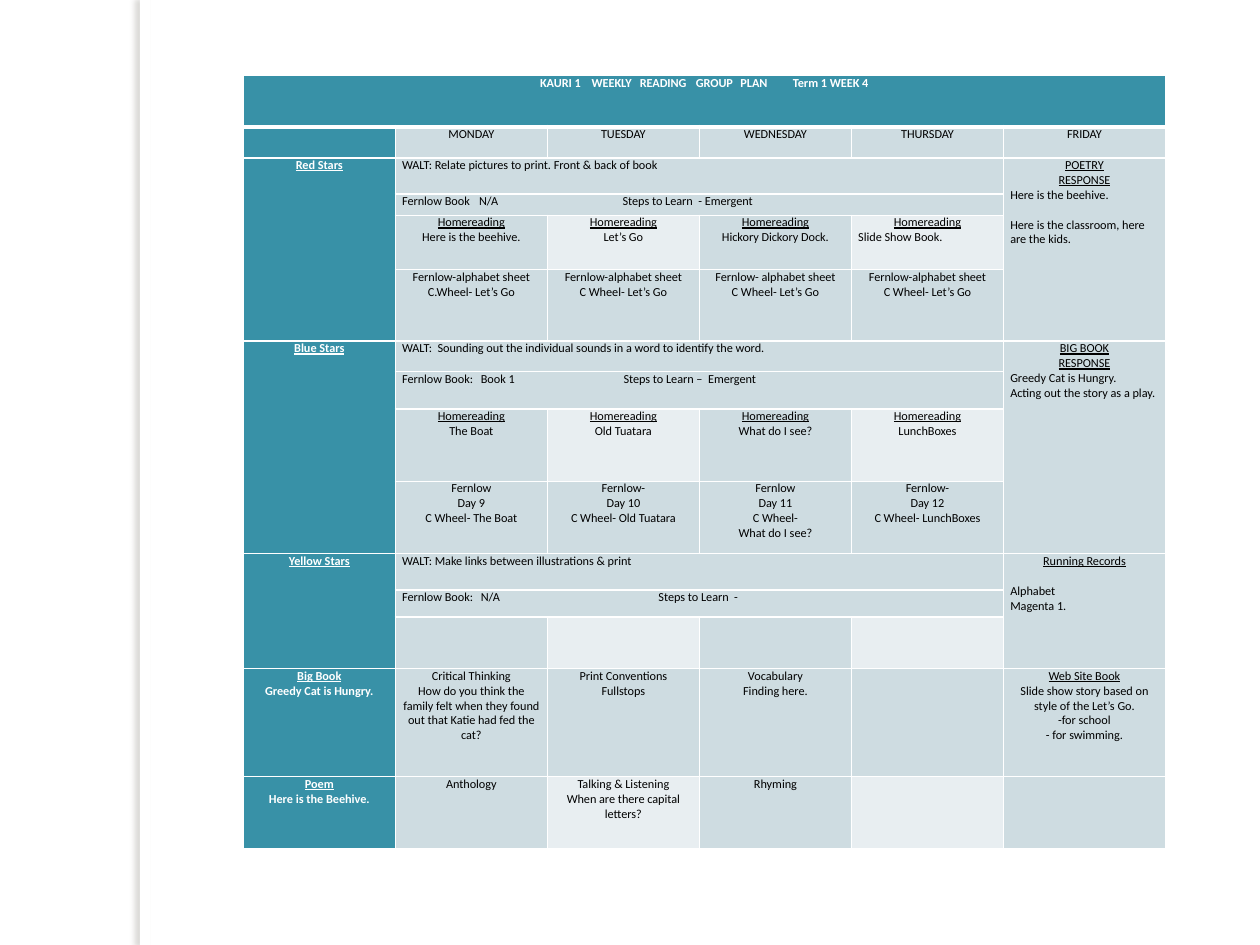
from lxml import etree
from pptx import Presentation
from pptx.dml.color import RGBColor
from pptx.enum.shapes import MSO_SHAPE
from pptx.enum.text import PP_ALIGN
from pptx.oxml.ns import qn
from pptx.util import Pt

LEFT, CENTER = PP_ALIGN.LEFT, PP_ALIGN.CENTER
RECTANGLE = MSO_SHAPE.RECTANGLE

COLORS = {"head": "3891A7", "band": "CEDCE1", "light": "E8EEF1",
          "white": "FFFFFF", "black": "000000", "shadow": "736F63"}
FONT, SIZE = "Calibri", 7

# A cell is a list of paragraphs, centred unless marked:
# "_" underlined, "<" left aligned, "+" left aligned after a gap.
JOIN_LEFT, JOIN_UP = "join left", "join up"
HOME = "_Homereading"


def wide(text):
    return [JOIN_UP, ["<" + text]] + [JOIN_LEFT] * 3 + [JOIN_UP]


def group(name, walt, friday):
    return [["_" + name], ["<" + walt]] + [JOIN_LEFT] * 3 + [friday]


ROWS = [  # height, cells
    (29.4, [["<\tKAURI 1\tWEEKLY\tREADING\tGROUP\tPLAN\tTerm 1 WEEK 4"]] + [JOIN_LEFT] * 5),
    (17.6, [[], ["MONDAY"], ["TUESDAY"], ["WEDNESDAY"], ["THURSDAY"], ["FRIDAY"]]),
    (20.6, group("Red Stars", "WALT: Relate pictures to print. Front & back of book",
                 ["_POETRY", "_RESPONSE", "<Here is the beehive.",
                  "+Here is the classroom, here are the kids."])),
    (12.3, wide("Fernlow Book\tN/A\tSteps to Learn  - Emergent")),
    (31, [JOIN_UP, [HOME, "Here is the beehive."], [HOME, "Let’s Go"],
          [HOME, "Hickory Dickory Dock."], [HOME, "<Slide Show Book."], JOIN_UP]),
    (41, [JOIN_UP, ["Fernlow-alphabet sheet", "C.Wheel- Let’s Go"],
          ["Fernlow-alphabet sheet", "C Wheel- Let’s Go"],
          ["Fernlow- alphabet sheet", "C Wheel- Let’s Go"],
          ["Fernlow-alphabet sheet", "C Wheel- Let’s Go"], JOIN_UP]),
    (17.3, group("Blue Stars",
                 "WALT:  Sounding out the individual sounds in a word to identify the word.",
                 ["_BIG BOOK", "_RESPONSE", "<Greedy Cat is Hungry.",
                  "<Acting out the story as a play."])),
    (21.4, wide("Fernlow Book:\tBook 1\tSteps to Learn –  Emergent")),
    (41.4, [JOIN_UP, [HOME, "The Boat"], [HOME, "Old Tuatara"],
            [HOME, "What do I see?"], [HOME, "LunchBoxes"], JOIN_UP]),
    (41.4, [JOIN_UP, ["Fernlow", "Day 9", "C Wheel- The Boat"],
            ["Fernlow-", "Day 10", "C Wheel- Old Tuatara"],
            ["Fernlow", "Day 11", "C Wheel-", "What do I see?"],
            ["Fernlow-", "Day 12", "C Wheel- LunchBoxes"], JOIN_UP]),
    (20.6, group("Yellow Stars", "WALT: Make links between illustrations & print",
                 ["_Running Records", "+Alphabet", "<Magenta 1."])),
    (15.7, wide("Fernlow Book:\tN/A\tSteps to Learn  -")),
    (29.4, [JOIN_UP, [], [], [], [], JOIN_UP]),
    (61.7, [["_Big Book", "Greedy Cat is Hungry."],
            ["Critical Thinking", "How do you think the family felt when they found "
             "out that Katie had fed the cat?"],
            ["Print Conventions", "Fullstops"], ["Vocabulary", "Finding here."], [],
            ["_Web Site Book", "Slide show story based on style of the Let’s Go.",
             "-for school", "- for swimming."]]),
    (41, [["_Poem", "Here is the Beehive."], ["Anthology"],
          ["Talking & Listening", "When are there capital letters?"], ["Rhyming"], [], []]),
]
COLUMNS = [86.9] * 5 + [92.5]
SIDE_MARGIN = 3.9
TAB_STOPS = {0: (165.7, 195.2, 222.7, 254.7, 280.2, 310.2),
             3: (44, 126), 7: (45, 126.5), 11: (45, 146.5)}
LIGHT_ROWS, LIGHT_COLUMNS = (4, 8, 12, 14), (2, 4)


def rgb(name):
    return RGBColor.from_string(COLORS[name])


def add_color(parent, name):
    return etree.SubElement(parent, qn("a:srgbClr"), val=COLORS[name])


def set_borders(cell, row):
    tc_pr = cell._tc.get_or_add_tcPr()
    for i, side in enumerate("LRTB"):
        thick = (row, side) in ((0, "B"), (1, "T"))
        ln = etree.Element(qn("a:ln" + side), w=str(Pt(3 if thick else 1)))
        add_color(etree.SubElement(ln, qn("a:solidFill")), "white")
        tc_pr.insert(i, ln)


def set_tabs(p, stops):
    tabs = etree.SubElement(p._p.get_or_add_pPr(), qn("a:tabLst"))
    for stop in stops:
        etree.SubElement(tabs, qn("a:tab"), pos=str(Pt(stop)), algn="l")


def write_cell(cell, paragraphs, row, is_head):
    tf = cell.text_frame
    for i, text in enumerate(paragraphs):
        p = tf.add_paragraph() if i else tf.paragraphs[0]
        mark = text[0] if text[0] in "_<+" else ""
        p.text = text[len(mark):]
        p.alignment = LEFT if mark in ("<", "+") else CENTER
        if mark == "+":
            p.space_before = Pt(8.5)
        if "\t" in text:
            set_tabs(p, TAB_STOPS[row])
        for r in p.runs:
            r.font.name, r.font.size = FONT, Pt(SIZE)
            r.font.bold = is_head
            r.font.underline = mark == "_"
            r.font.color.rgb = rgb("white" if is_head else "black")
    if not paragraphs:  # keeps an empty cell from stretching its row
        etree.SubElement(tf.paragraphs[0]._p, qn("a:endParaRPr"), sz=str(SIZE * 100))


def span(row, col):
    """Return how many rows and columns the cell covers."""
    down = across = 1
    while row + down < len(ROWS) and ROWS[row + down][1][col] == JOIN_UP:
        down += 1
    while col + across < len(COLUMNS) and ROWS[row][1][col + across] == JOIN_LEFT:
        across += 1
    return down, across


def add_side_strip(slide):
    sp = slide.shapes.add_shape(RECTANGLE, Pt(80), 0, Pt(5.76), Pt(540))
    sp.fill.solid()
    sp.fill.fore_color.rgb = rgb("white")
    sp.line.fill.background()
    effects = etree.SubElement(sp._element.spPr, qn("a:effectLst"))
    shadow = etree.SubElement(effects, qn("a:outerShdw"), blurRad=str(Pt(3)),
                              dist=str(Pt(3)), dir="10800000", rotWithShape="0")
    etree.SubElement(add_color(shadow, "shadow"), qn("a:alpha"), val="25000")


def add_plan(slide):
    height = sum(h for h, _ in ROWS)
    table = slide.shapes.add_table(len(ROWS), len(COLUMNS), Pt(139), Pt(43.2),
                                   Pt(sum(COLUMNS)), Pt(height)).table
    table.first_row = table.horz_banding = False
    for column, width in zip(table.columns, COLUMNS):
        column.width = Pt(width)
    for row, (height, cells) in enumerate(ROWS):
        table.rows[row].height = Pt(height)
        for col, content in enumerate(cells):
            cell = table.cell(row, col)
            is_head = row == 0 or col == 0
            is_light = row in LIGHT_ROWS and col in LIGHT_COLUMNS
            cell.margin_left = cell.margin_right = Pt(SIDE_MARGIN)
            cell.margin_top = cell.margin_bottom = 0
            cell.fill.solid()
            cell.fill.fore_color.rgb = rgb(
                "head" if is_head else "light" if is_light else "band")
            set_borders(cell, row)
            joined = content in (JOIN_LEFT, JOIN_UP)
            write_cell(cell, [] if joined else content, row, is_head)
            down, across = (1, 1) if joined else span(row, col)
            if down * across > 1:
                cell.merge(table.cell(row + down - 1, col + across - 1))


def main():
    prs = Presentation()
    prs.slide_width, prs.slide_height = Pt(720), Pt(540)
    slide = prs.slides.add_slide(prs.slide_layouts[6])
    add_side_strip(slide)
    add_plan(slide)
    prs.save("out.pptx")


if __name__ == "__main__":
    main()
